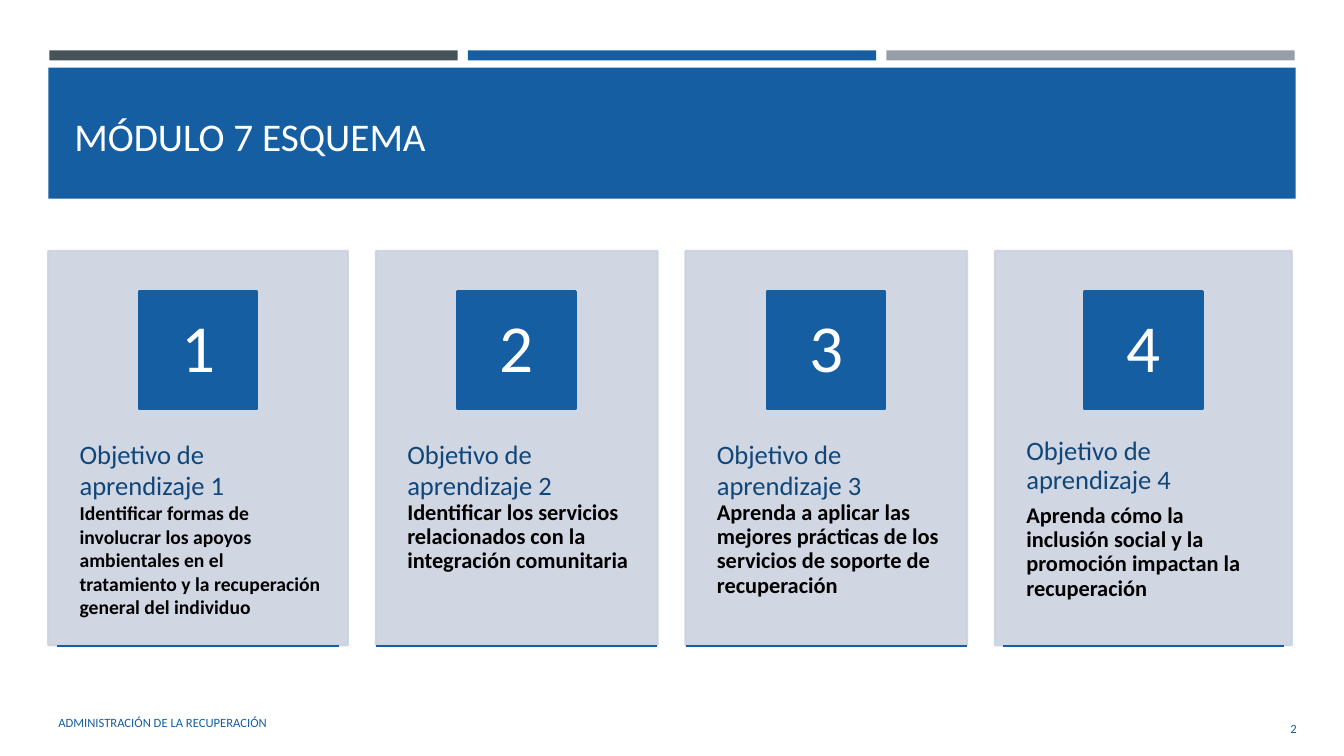
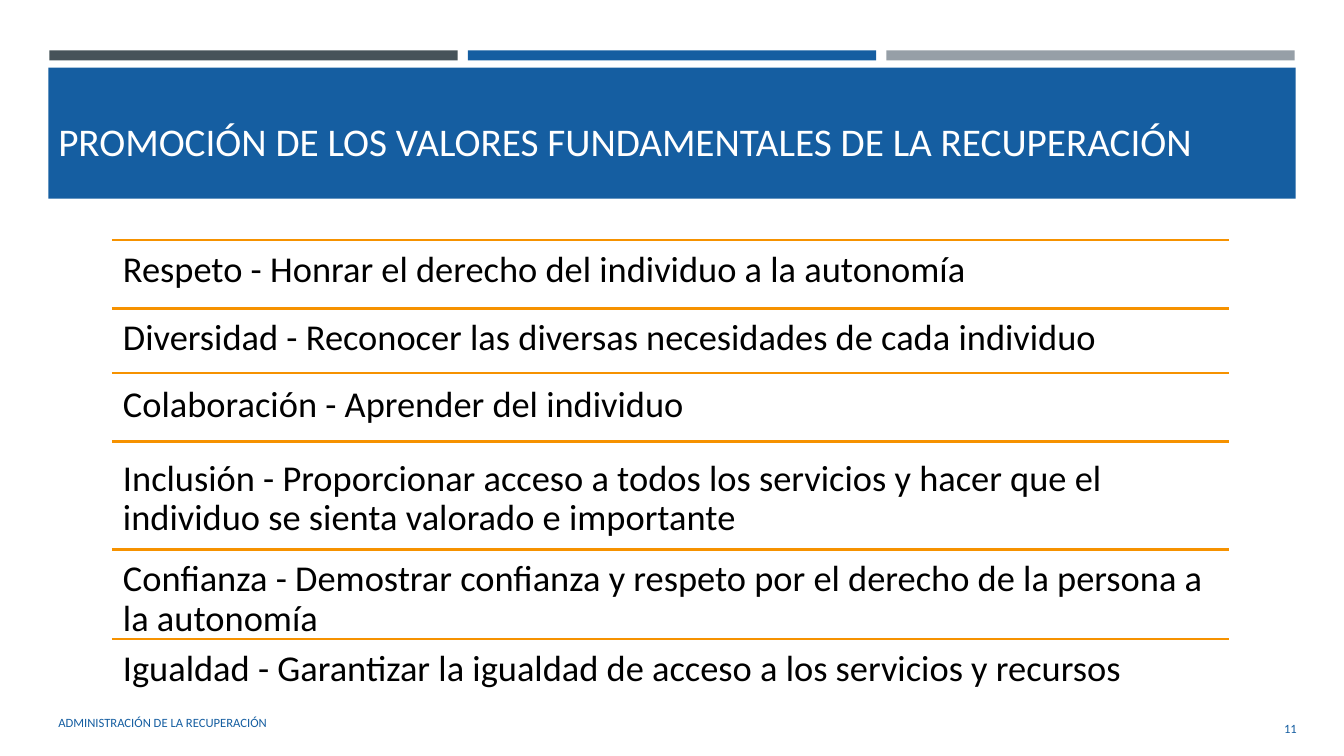
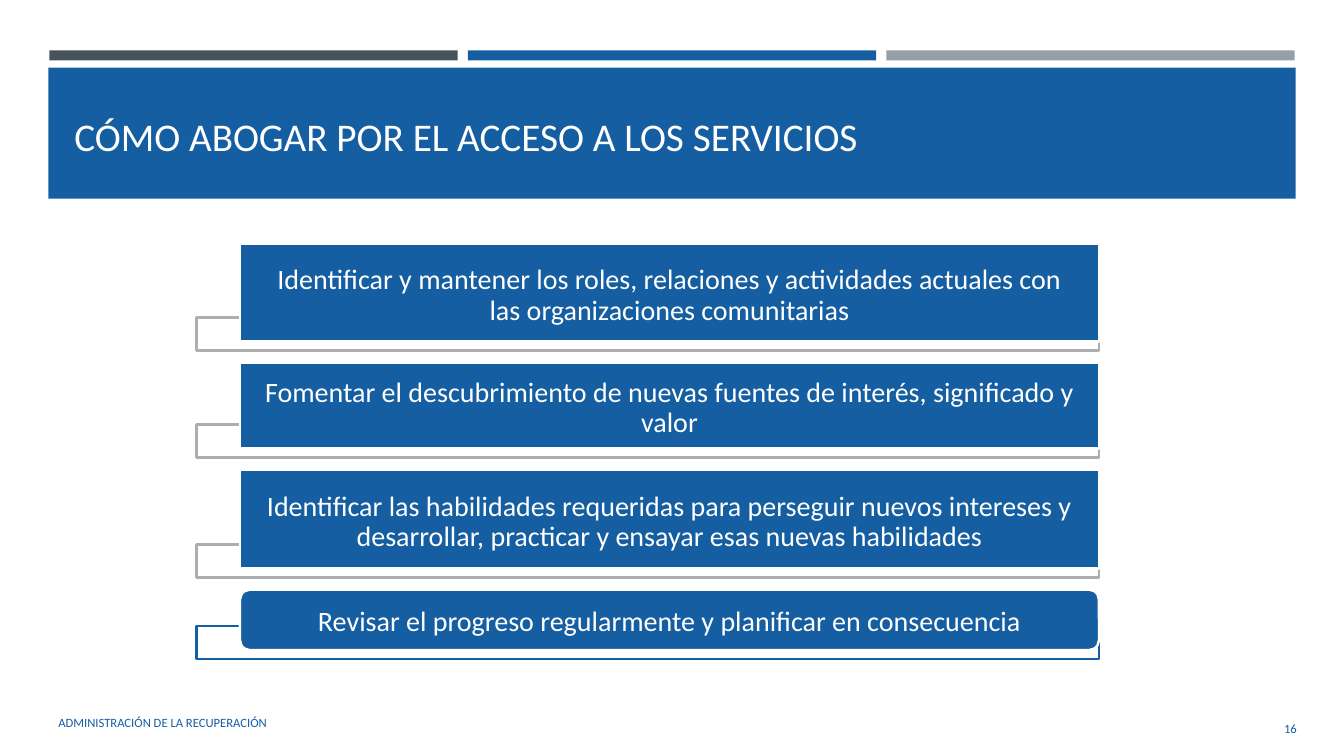
"""Build three slides of a course module on recovery management."""
from dataclasses import dataclass

from lxml.etree import SubElement
from pptx import Presentation
from pptx.dml.color import RGBColor
from pptx.enum.shapes import MSO_CONNECTOR, MSO_SHAPE
from pptx.enum.text import MSO_ANCHOR, PP_ALIGN
from pptx.oxml.ns import qn
from pptx.util import Inches, Pt

FONT = "Calibri"
BLUE = RGBColor(0x15, 0x5E, 0xA1)
NAVY = RGBColor(0x10, 0x46, 0x79)
SLATE = RGBColor(0x46, 0x53, 0x59)
SILVER = RGBColor(0x96, 0x9F, 0xA7)
GRAY = RGBColor(0xAE, 0xAE, 0xAE)
PALE = RGBColor(0xCC, 0xD2, 0xE0)
ORANGE = RGBColor(0xF6, 0x92, 0x00)
WHITE = RGBColor(0xFF, 0xFF, 0xFF)
BLACK = RGBColor(0x00, 0x00, 0x00)

LINE_WIDTH = 1.75
FOOTER = "ADMINISTRACIÓN DE LA RECUPERACIÓN"


@dataclass(frozen=True)
class Goal:
    width: float
    text: str
    size: float = 16
    heading_spacing: float = 1.0
    text_spacing: float = 0.9
    gap: float = 0


@dataclass(frozen=True)
class Value:
    line_top: float
    text: str
    offset: float = 0


@dataclass(frozen=True)
class Step:
    height: float
    text: str
    outline: RGBColor = GRAY
    preset: MSO_SHAPE = MSO_SHAPE.RECTANGLE


GOALS = (
    Goal(2.97, "Identificar formas de involucrar los apoyos ambientales en el "
         "tratamiento y la recuperación general del individuo", size=14, text_spacing=1.0),
    Goal(2.79, "Identificar los servicios relacionados con la integración comunitaria"),
    Goal(2.79, "Aprenda a aplicar las mejores prácticas de los servicios de "
         "soporte de recuperación"),
    Goal(2.94, "Aprenda cómo la inclusión social y la promoción impactan la "
         "recuperación", heading_spacing=0.9, gap=6.65),
)
VALUES = (
    Value(2.38, "Respeto - Honrar el derecho del individuo a la autonomía"),
    Value(3.06, "Diversidad - Reconocer las diversas necesidades de cada individuo"),
    Value(3.7, "Colaboración - Aprender del individuo", offset=0.02),
    Value(4.38, "Inclusión - Proporcionar acceso a todos los servicios y hacer que el "
          "individuo se sienta valorado e importante", offset=0.07),
    Value(5.45, "Confianza - Demostrar confianza y respeto por el derecho de la persona a "
          "la autonomía"),
    Value(6.34, "Igualdad - Garantizar la igualdad de acceso a los servicios y recursos"),
)
STEPS = (
    Step(0.97, "Identificar y mantener los roles, relaciones y actividades actuales con "
         "las organizaciones comunitarias"),
    Step(0.85, "Fomentar el descubrimiento de nuevas fuentes de interés, significado y valor"),
    Step(0.98, "Identificar las habilidades requeridas para perseguir nuevos intereses y "
         "desarrollar, practicar y ensayar esas nuevas habilidades"),
    Step(0.6, "Revisar el progreso regularmente y planificar en consecuencia",
         outline=BLUE, preset=MSO_SHAPE.ROUNDED_RECTANGLE),
)


def add_paragraph(frame, text: str, *, size: float, color: RGBColor, bold: bool = False,
                  align=PP_ALIGN.LEFT, spacing: float = 1.0, after: float = 0) -> None:
    """Write a formatted paragraph, using the empty first one if it is free."""
    first = frame.paragraphs[0]
    para = frame.add_paragraph() if first.runs else first
    para.alignment = align
    para.line_spacing = spacing
    para.space_after = Pt(after)
    span = para.add_run()
    span.text = text
    span.font.name = FONT
    span.font.size = Pt(size)
    span.font.bold = bold
    span.font.color.rgb = color


def set_frame(shape, *, insets=(0.1, 0.05, 0.1, 0.05), anchor=MSO_ANCHOR.MIDDLE):
    """Set wrapping, insets (left, top, right, bottom) and anchor; return the frame."""
    frame = shape.text_frame
    frame.word_wrap = True
    frame.vertical_anchor = anchor
    (frame.margin_left, frame.margin_top,
     frame.margin_right, frame.margin_bottom) = map(Inches, insets)
    return frame


def add_box(page, left: float, top: float, width: float, height: float, **layout):
    """Add a text box and return its frame."""
    box = page.shapes.add_textbox(Inches(left), Inches(top), Inches(width), Inches(height))
    return set_frame(box, **layout)


def add_block(page, left: float, top: float, width: float, height: float, *,
              fill: RGBColor, line: RGBColor | None = None, preset=MSO_SHAPE.RECTANGLE):
    """Add a filled shape with an optional outline."""
    block = page.shapes.add_shape(preset, Inches(left), Inches(top),
                                  Inches(width), Inches(height))
    block.shadow.inherit = False
    block.fill.solid()
    block.fill.fore_color.rgb = fill
    if line is None:
        block.line.fill.background()
    else:
        block.line.color.rgb = line
        block.line.width = Pt(LINE_WIDTH)
    return block


def set_opacity(shape, percent: int) -> None:
    """Make the fill and outline of a shape partly transparent."""
    for color in shape._element.spPr.iter(qn("a:srgbClr")):
        SubElement(color, qn("a:alpha")).set("val", str(percent * 1000))


def add_rule(page, left: float, top: float, width: float, color: RGBColor) -> None:
    """Add a horizontal line without a shadow."""
    rule = page.shapes.add_connector(MSO_CONNECTOR.STRAIGHT, Inches(left), Inches(top),
                                     Inches(left + width), Inches(top))
    rule.line.color.rgb = color
    rule.line.width = Pt(LINE_WIDTH)
    SubElement(rule._element.spPr, qn("a:effectLst"))


def add_page(deck, title: str, number: int, *, title_left: float = 0.64,
             title_top: float = 0.79):
    """Add a page with the shared bands, title, footer and number."""
    page = deck.slides.add_slide(deck.slide_layouts[6])
    for index, color in enumerate((SLATE, BLUE, SILVER)):
        add_block(page, 0.49 + index * 4.15, 0.5, 4.05, 0.1, fill=color)
    add_block(page, 0.48, 0.67, 12.37, 1.3, fill=BLUE)
    add_paragraph(add_box(page, title_left, title_top, 12.06, 1.11), title,
                  size=28, color=WHITE)
    add_paragraph(add_box(page, 0.48, 6.97, 7.46, 0.4), FOOTER, size=9, color=BLUE)
    add_paragraph(add_box(page, 11.81, 7.03, 1.15, 0.4), str(number),
                  size=9, color=BLUE, align=PP_ALIGN.RIGHT)
    return page


def draw_goals(page) -> None:
    """Draw one numbered card for each learning goal."""
    left, top, gap, badge, rule = 0.48, 2.49, 0.28, 1.17, 2.79
    for number, goal in enumerate(GOALS, start=1):
        middle = left + goal.width / 2
        card = add_block(page, left, top, goal.width, 3.91, fill=PALE, line=PALE)
        set_opacity(card, 90)
        frame = add_box(page, left, 3.98, goal.width, 2.35,
                        insets=(0.31, 0.36, 0.22, 0.36), anchor=MSO_ANCHOR.TOP)
        add_paragraph(frame, f"Objetivo de aprendizaje {number}", size=19, color=NAVY,
                      spacing=goal.heading_spacing, after=goal.gap)
        add_paragraph(frame, goal.text, size=goal.size, color=BLACK, bold=True,
                      spacing=goal.text_spacing)
        square = add_block(page, middle - badge / 2, 2.89, badge, badge, fill=BLUE, line=BLUE)
        add_paragraph(set_frame(square, insets=(0.09, 0.01, 0.09, 0.01)), str(number),
                      size=48, color=WHITE, align=PP_ALIGN.CENTER, spacing=0.9)
        add_rule(page, middle - rule / 2, 6.41, rule, BLUE)
        left += goal.width + gap


def draw_values(page) -> None:
    """Draw the core values, each below a line."""
    left, width = 1.11, 11.08
    for value in VALUES:
        add_rule(page, left, value.line_top, width, ORANGE)
        frame = add_box(page, left, value.line_top + value.offset, width, 0.68,
                        insets=(0.11,) * 4, anchor=MSO_ANCHOR.TOP)
        add_paragraph(frame, value.text, size=26, color=BLACK, spacing=0.9)


def draw_steps(page) -> None:
    """Draw the steps as stacked blocks, each over an outlined frame."""
    top, gap = 2.42, 0.21
    for step in STEPS:
        bottom = top + step.height
        add_block(page, 1.95, bottom - 0.24, 8.95, 0.33, fill=WHITE, line=step.outline)
        block = add_block(page, 2.38, top, 8.52, step.height, fill=BLUE, line=WHITE,
                          preset=step.preset)
        add_paragraph(set_frame(block, insets=(0.24, 0.06, 0.24, 0)), step.text, size=20,
                      color=WHITE, align=PP_ALIGN.CENTER, spacing=0.9)
        top = bottom + gap


def main() -> None:
    """Build and save the deck."""
    deck = Presentation()
    deck.slide_width = Inches(13.33)
    deck.slide_height = Inches(7.5)
    draw_goals(add_page(deck, "MÓDULO 7 ESQUEMA", 2))
    draw_values(add_page(deck, "PROMOCIÓN DE LOS VALORES FUNDAMENTALES DE LA RECUPERACIÓN",
                         11, title_left=0.48, title_top=0.84))
    draw_steps(add_page(deck, "CÓMO ABOGAR POR EL ACCESO A LOS SERVICIOS", 16))
    deck.save("out.pptx")


if __name__ == "__main__":
    main()
